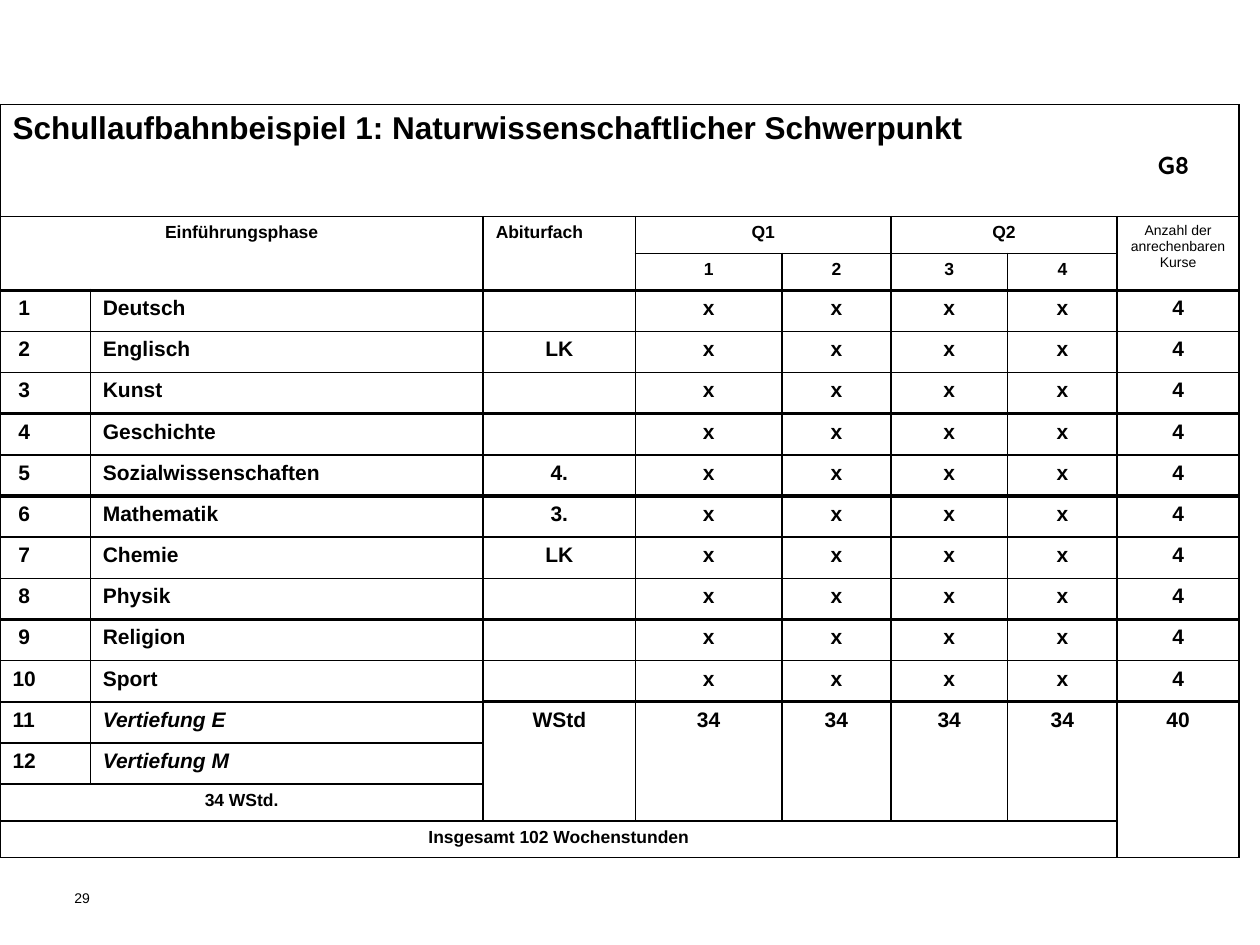
from typing import NamedTuple

from pptx import Presentation
from pptx.dml.color import RGBColor
from pptx.enum.text import PP_ALIGN
from pptx.oxml.ns import qn
from pptx.util import Cm, Pt
from lxml.etree import SubElement

COLORS = {"ink": "000000"}
LEFT, CENTER = PP_ALIGN.LEFT, PP_ALIGN.CENTER


class Course(NamedTuple):
    name: str
    exam: str = ""


class Block(NamedTuple):
    row: int
    col: int
    text: str
    rows: int = 1
    cols: int = 1
    size: int = 10
    bold: bool = True
    align: PP_ALIGN = CENTER


COURSES = [
    Course("Deutsch"), Course("Englisch", "LK"), Course("Kunst"),
    Course("Geschichte"), Course("Sozialwissenschaften", "4."),
    Course("Mathematik", "3."), Course("Chemie", "LK"), Course("Physik"),
    Course("Religion"), Course("Sport"),
]
EXTRAS = ["Vertiefung E", "Vertiefung M"]
FIRST = 3                               # first course row
TOTALS = FIRST + len(COURSES)           # first row of the totals
LAST = TOTALS + len(EXTRAS) + 1
COL_WIDTHS = [1.82, 7.92, 3.07, 2.95, 2.2, 2.35, 2.21, 2.46]
ROW_HEIGHTS = [2.26, 0.74, 0.74] + [0.83] * (LAST - 1 - FIRST) + [0.74] * 2
HEAVY_ROWS = {2, 5, 7, 10}              # rows closed by a 2 pt line

BLOCKS = [
    Block(0, 0, "Schullaufbahnbeispiel 1: Naturwissenschaftlicher Schwerpunkt",
          cols=8, size=18, align=LEFT),
    Block(1, 0, "Einführungsphase", rows=2, cols=2),
    Block(1, 2, "Abiturfach", rows=2, align=LEFT),
    Block(1, 3, "Q1", cols=2),
    Block(1, 5, "Q2", cols=2),
    Block(1, 7, "Anzahl der anrechenbaren Kurse", rows=2, size=8, bold=False),
    *[Block(2, 2 + n, str(n)) for n in range(1, 5)],
    Block(TOTALS, 2, "WStd", rows=3, size=12),
    *[Block(TOTALS, c, "34", rows=3, size=12) for c in range(3, 7)],
    Block(TOTALS, 7, "40", rows=4, size=12),
    Block(LAST - 1, 0, "34 WStd.", cols=2),
    Block(LAST, 0, "Insgesamt 102 Wochenstunden", cols=7),
]


def write(tf, text: str, *, size: int = 12, bold: bool = True, italic: bool = False,
          align: PP_ALIGN = LEFT, font: str = "Arial") -> None:
    p = tf.paragraphs[0]
    p.alignment = align
    r = p.add_run()
    r.text = text
    r.font.name, r.font.size = font, Pt(size)
    r.font.bold, r.font.italic = bold, italic
    r.font.color.rgb = RGBColor.from_string(COLORS["ink"])


def add_text(s, x: float, y: float, w: float, h: float, text: str,
             inset: bool = True, **fmt) -> None:
    tf = s.shapes.add_textbox(Cm(x), Cm(y), Cm(w), Cm(h)).text_frame
    tf.word_wrap = True
    if not inset:
        tf.margin_left = tf.margin_top = tf.margin_right = tf.margin_bottom = 0
    write(tf, text, **fmt)


def line_below(row: int, col: int) -> int:
    heavy = row in HEAVY_ROWS or (row == TOTALS - 1 and col >= 2)
    return 2 if heavy else 1


def set_borders(cell, **widths: int) -> None:
    tc_pr = cell._tc.get_or_add_tcPr()
    for side, width in widths.items():
        ln = SubElement(tc_pr, qn(f"a:ln{side}"), w=str(Pt(width)))
        fill = SubElement(ln, qn("a:solidFill"))
        SubElement(fill, qn("a:srgbClr"), val=COLORS["ink"])


def add_plan(s) -> None:
    tbl = s.shapes.add_table(
        len(ROW_HEIGHTS), len(COL_WIDTHS), Cm(0), Cm(2.11),
        Cm(sum(COL_WIDTHS)), Cm(sum(ROW_HEIGHTS))).table
    tbl.first_row = tbl.horz_banding = False
    for col, width in zip(tbl.columns, COL_WIDTHS):
        col.width = Cm(width)
    for row, height in zip(tbl.rows, ROW_HEIGHTS):
        row.height = Cm(height)

    # Headings and totals
    for b in BLOCKS:
        cell = tbl.cell(b.row, b.col)
        if b.rows * b.cols > 1:
            cell.merge(tbl.cell(b.row + b.rows - 1, b.col + b.cols - 1))
        write(cell.text_frame, b.text, size=b.size, bold=b.bold, align=b.align)

    # Courses
    for i, course in enumerate(COURSES):
        row = FIRST + i
        write(tbl.cell(row, 0).text_frame, f"{i + 1:>2}")
        write(tbl.cell(row, 1).text_frame, course.name)
        for c, text in enumerate([course.exam, *"xxxx", "4"], 2):
            if text:
                write(tbl.cell(row, c).text_frame, text, align=CENTER)
    for i, name in enumerate(EXTRAS):
        write(tbl.cell(TOTALS + i, 0).text_frame, str(len(COURSES) + i + 1))
        write(tbl.cell(TOTALS + i, 1).text_frame, name, italic=True)

    # Grid lines, no fill, small type in empty cells
    for r in range(len(ROW_HEIGHTS)):
        for c in range(len(COL_WIDTHS)):
            cell = tbl.cell(r, c)
            bottom = r + (cell.span_height if cell.is_merge_origin else 1) - 1
            set_borders(cell, L=1, R=1, T=line_below(r - 1, c), B=line_below(bottom, c))
            cell.fill.background()
            if not cell.text:
                end = cell.text_frame.paragraphs[0]._p.get_or_add_endParaRPr()
                end.set("sz", "1000")


def main() -> None:
    prs = Presentation()
    prs.slide_width, prs.slide_height = Cm(25.4), Cm(19.05)
    s = prs.slides.add_slide(prs.slide_layouts[6])
    # Page number
    add_text(s, 1.5, 17.93, 0.81, 0.94, "29", inset=False, size=8, bold=False)
    add_plan(s)
    # School form
    add_text(s, 23.09, 2.9, 1.4, 0.84, "G8", size=14, font="Quicksand")
    prs.save("out.pptx")


if __name__ == "__main__":
    main()
